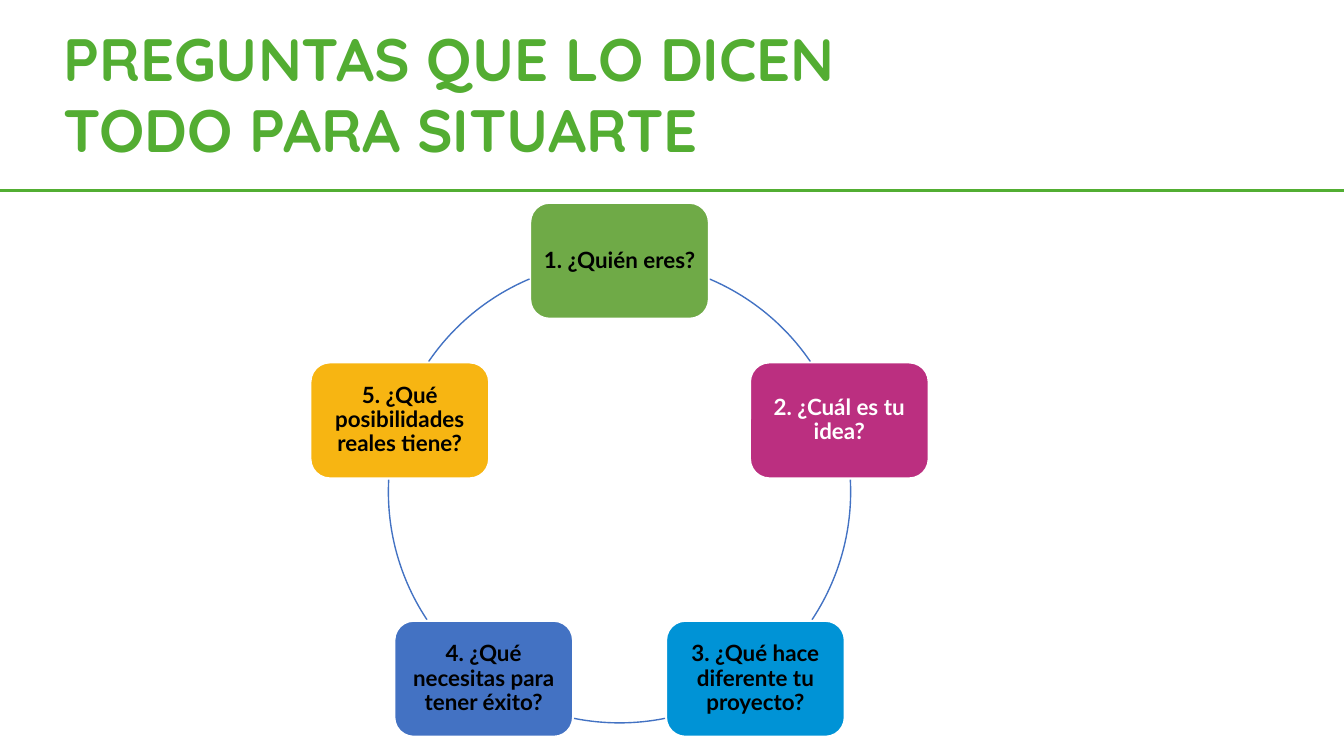
from dataclasses import dataclass
from math import cos, radians, sin

from pptx import Presentation
from pptx.dml.color import RGBColor
from pptx.enum.shapes import MSO_CONNECTOR as Connector, MSO_SHAPE as Preset
from pptx.enum.text import MSO_ANCHOR as Anchor, MSO_AUTO_SIZE as AutoSize, PP_ALIGN as Align
from pptx.oxml.ns import qn
from pptx.slide import Slide
from pptx.text.text import TextFrame
from pptx.util import Pt
from lxml.etree import SubElement


@dataclass(frozen=True)
class Theme:
    title: str = "53AD32"
    rule: str = "52AE32"
    arc: str = "4372C3"
    white: str = "FFFFFF"
    black: str = "000000"
    title_font: str = "Quicksand"
    body_font: str = "Lato"
    title_size: float = 32
    body_size: float = 12


@dataclass(frozen=True)
class Question:
    text: str
    fill: str
    text_color: str
    arc_start: float  # degrees clockwise from the right, for the arc to the next question
    arc_end: float


THEME = Theme()
SLIDE_WIDTH, SLIDE_HEIGHT = 720, 405
RULE_TOP = 102.1
CENTER_X, CENTER_Y, RADIUS = 331.9, 263.5, 123.8
BOX_WIDTH, BOX_HEIGHT = 95.6, 62

QUESTIONS = [
    Question("1. ¿Quién eres?", "6FAA47", THEME.black, 292.9, 325.7),
    Question("2. ¿Cuál es tu idea?", "BB2F80", THEME.white, 357, 33.6),
    Question("3. ¿Qué hace diferente tu proyecto?", "0093D6", THEME.black, 78.6, 101.4),
    Question("4. ¿Qué necesitas para tener éxito?", "4372C3", THEME.black, 146.4, 183),
    Question("5. ¿Qué posibilidades reales tiene?", "F7B512", THEME.black, 214.3, 247.1),
]


def color(value: str) -> RGBColor:
    return RGBColor.from_string(value)


def format_text(frame: TextFrame, font: str, size: float, text_color: str,
                alignment: Align, spacing: float) -> None:
    for paragraph in frame.paragraphs:
        paragraph.alignment = alignment
        paragraph.line_spacing = spacing
        for run in paragraph.runs:
            run.font.name = font
            run.font.size = Pt(size)
            run.font.bold = True
            run.font.color.rgb = color(text_color)


def add_title(slide: Slide, text: str) -> None:
    title = slide.shapes.title
    title.left, title.top, title.width, title.height = Pt(26.6), Pt(7.9), Pt(627), Pt(85)
    frame = title.text_frame
    frame.text = text
    frame.word_wrap = True
    frame.auto_size = AutoSize.NONE
    frame.vertical_anchor = Anchor.TOP
    format_text(frame, THEME.title_font, THEME.title_size, THEME.title, Align.LEFT, 1.0)


def add_rule(slide: Slide) -> None:
    rule = slide.shapes.add_connector(
        Connector.STRAIGHT, Pt(0), Pt(RULE_TOP), Pt(SLIDE_WIDTH), Pt(RULE_TOP))
    rule.line.color.rgb = color(THEME.rule)
    rule.line.width = Pt(2)
    SubElement(rule._element.spPr, qn("a:effectLst"))


def add_arc(slide: Slide, question: Question) -> None:
    arc = slide.shapes.add_shape(
        Preset.ARC, Pt(CENTER_X - RADIUS), Pt(CENTER_Y - RADIUS), Pt(2 * RADIUS), Pt(2 * RADIUS))
    # Angles are stored in 60000ths of a degree, adjustments in 100000ths.
    arc.adjustments[0] = question.arc_start * 0.6
    arc.adjustments[1] = question.arc_end * 0.6
    arc.shadow.inherit = False
    arc.fill.background()
    arc.line.color.rgb = color(THEME.arc)
    arc.line.width = Pt(0.75)


def add_box(slide: Slide, question: Question, angle: float) -> None:
    """Centre a question box on the cycle at the given angle in degrees."""
    left = CENTER_X + RADIUS * cos(radians(angle)) - BOX_WIDTH / 2
    top = CENTER_Y + RADIUS * sin(radians(angle)) - BOX_HEIGHT / 2
    box = slide.shapes.add_shape(
        Preset.ROUNDED_RECTANGLE, Pt(left), Pt(top), Pt(BOX_WIDTH), Pt(BOX_HEIGHT))
    box.shadow.inherit = False
    box.fill.solid()
    box.fill.fore_color.rgb = color(question.fill)
    box.line.color.rgb = color(THEME.white)
    box.line.width = Pt(1)
    frame = box.text_frame
    frame.text = question.text
    frame.word_wrap = True
    frame.vertical_anchor = Anchor.MIDDLE
    frame.margin_left = frame.margin_right = frame.margin_top = frame.margin_bottom = Pt(3.6)
    format_text(frame, THEME.body_font, THEME.body_size, question.text_color, Align.CENTER, 0.9)


def main() -> None:
    presentation = Presentation()
    presentation.slide_width, presentation.slide_height = Pt(SLIDE_WIDTH), Pt(SLIDE_HEIGHT)
    slide = presentation.slides.add_slide(presentation.slide_layouts[5])
    add_title(slide, "PREGUNTAS QUE LO DICEN\nTODO PARA SITUARTE")
    add_rule(slide)
    for index, question in enumerate(QUESTIONS):
        add_arc(slide, question)
        add_box(slide, question, -90 + index * 360 / len(QUESTIONS))
    presentation.save("out.pptx")


if __name__ == "__main__":
    main()
